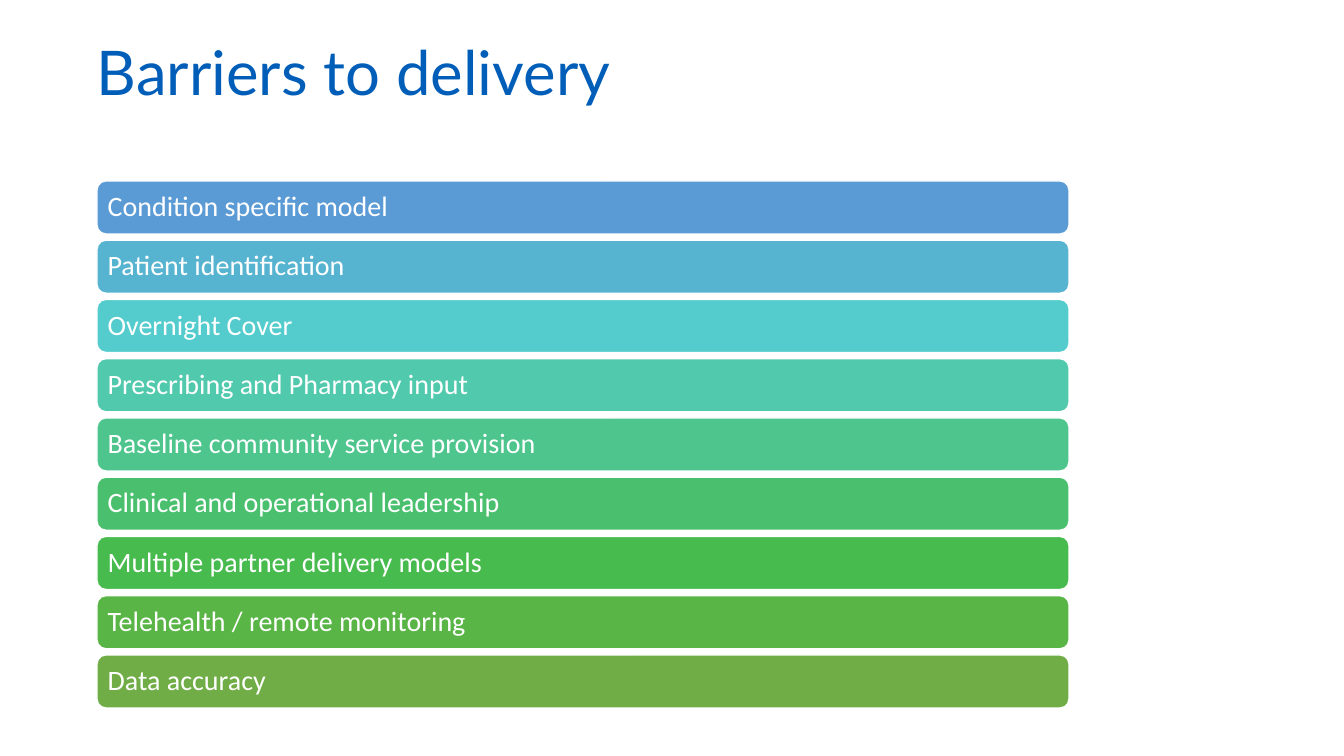
from pptx import Presentation
from pptx.dml.color import RGBColor
from pptx.enum.shapes import MSO_SHAPE
from pptx.enum.text import MSO_ANCHOR, PP_ALIGN
from pptx.util import Emu, Pt

SCALE = 914400 / 100.8
COLORS = {"title": "005EB8", "white": "FFFFFF"}
BARS = [
    ("Condition specific model", "5B9BD5"),
    ("Patient identification", "57B4D1"),
    ("Overnight Cover", "54CCCD"),
    ("Prescribing and Pharmacy input", "51C9AD"),
    ("Baseline community service provision", "4DC58D"),
    ("Clinical and operational leadership", "4AC06E"),
    ("Multiple partner delivery models", "48BB4F"),
    ("Telehealth / remote monitoring", "59B546"),
    ("Data accuracy", "70AD47"),
]
LEFT, TOP, WIDTH, HEIGHT = 97, 181, 972, 53
LAST = 655  # top of the lowest bar


def px(n):
    return Emu(round(n * SCALE))


def write(shape, text, *, font, size, color, inset):
    frame = shape.text_frame
    frame.word_wrap = True
    frame.vertical_anchor = MSO_ANCHOR.MIDDLE
    frame.margin_left = frame.margin_right = px(inset)
    frame.margin_top = frame.margin_bottom = px(5)
    para = frame.paragraphs[0]
    para.text = text
    para.alignment = PP_ALIGN.LEFT
    para.line_spacing = 0.9
    para.font.name = font
    para.font.size = Pt(size)
    para.font.color.rgb = RGBColor.from_string(COLORS[color])


deck = Presentation()
deck.slide_width, deck.slide_height = px(1344), px(756)
slide = deck.slides.add_slide(deck.slide_layouts[6])

title = slide.shapes.add_textbox(px(87), px(2), px(554), px(148))
write(title, "Barriers to delivery", font="Lato", size=44, color="title", inset=10)

step = (LAST - TOP) / (len(BARS) - 1)
for i, (label, fill) in enumerate(BARS):
    bar = slide.shapes.add_shape(
        MSO_SHAPE.ROUNDED_RECTANGLE,
        px(LEFT), px(TOP + i * step), px(WIDTH), px(HEIGHT))
    bar.shadow.inherit = False
    bar.fill.solid()
    bar.fill.fore_color.rgb = RGBColor.from_string(fill)
    bar.line.color.rgb = RGBColor.from_string(COLORS["white"])
    bar.line.width = Pt(1)
    write(bar, label, font="Calibri", size=20, color="white", inset=8)

deck.save("out.pptx")
